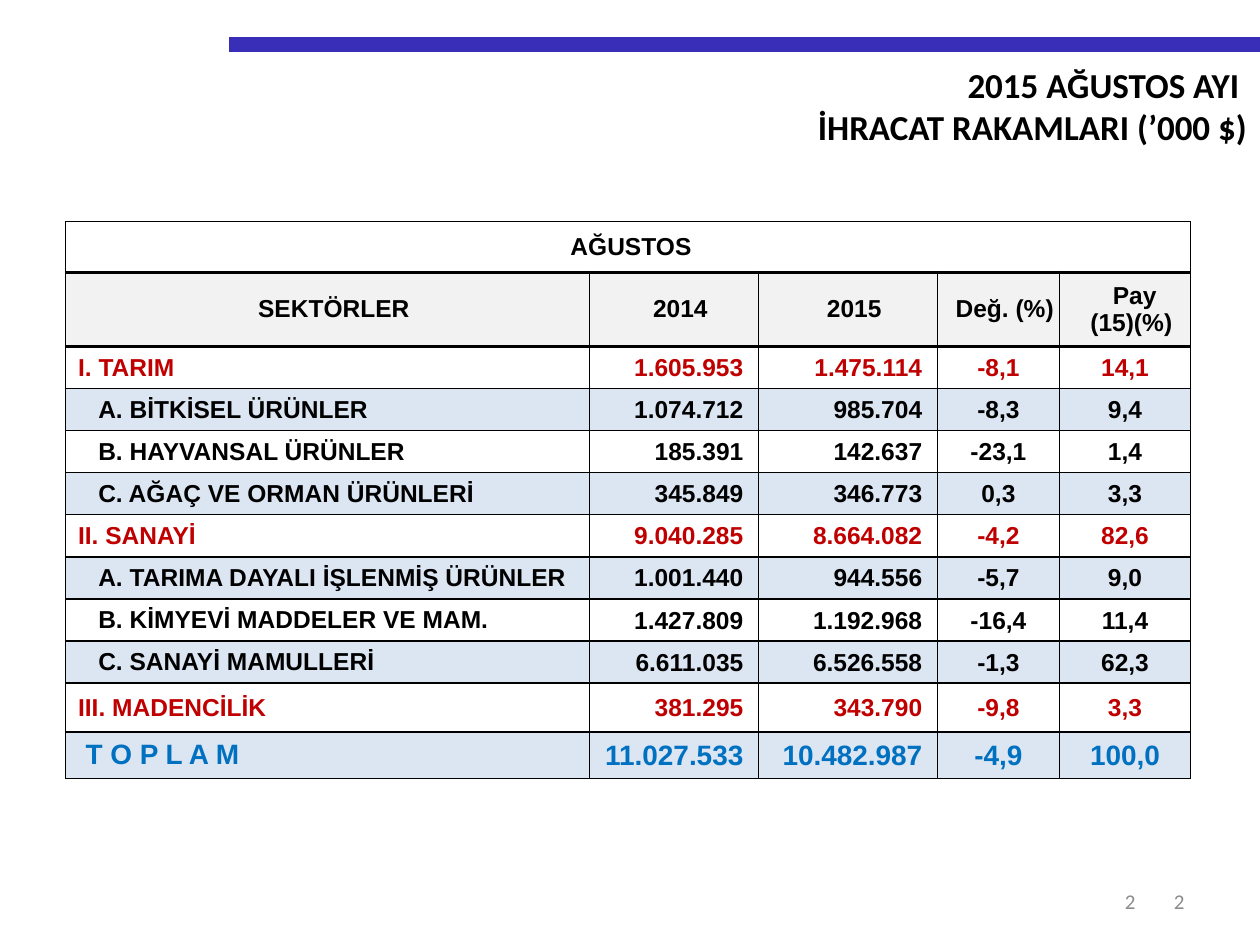
from lxml import etree
from pptx import Presentation
from pptx.dml.color import RGBColor
from pptx.enum.shapes import MSO_CONNECTOR
from pptx.enum.text import MSO_ANCHOR, MSO_AUTO_SIZE, PP_ALIGN
from pptx.oxml.ns import qn
from pptx.util import Inches, Pt

LEFT, CENTER, RIGHT = PP_ALIGN.LEFT, PP_ALIGN.CENTER, PP_ALIGN.RIGHT
TOP, MIDDLE = MSO_ANCHOR.TOP, MSO_ANCHOR.MIDDLE
STRAIGHT, NO_FIT = MSO_CONNECTOR.STRAIGHT, MSO_AUTO_SIZE.NONE

GRID_COLUMNS, GRID_ROWS = 100, 75
COLORS = {
    "text": "000000", "bar": "382EB8", "number": "8C8C8C", "white": "FFFFFF",
    "header": "F2F2F2", "band": "DCE6F2", "sector": "C00000", "total": "0070C0",
}
COLUMN_WIDTHS = [41.6, 13.4, 14.2, 9.7, 10.4]
ROW_HEIGHTS = [4, 5.9] + [3.3] * 8 + [3.9, 3.6]
HEADER = ["SEKTÖRLER", "2014", "2015", "Değ. (%)", " Pay\n(15)(%)"]
EXPORTS = [
    ["I. TARIM", "1.605.953", "1.475.114", "-8,1", "14,1"],
    ["A. BİTKİSEL ÜRÜNLER", "1.074.712", "985.704", "-8,3", "9,4"],
    ["B. HAYVANSAL ÜRÜNLER", "185.391", "142.637", "-23,1", "1,4"],
    ["C. AĞAÇ VE ORMAN ÜRÜNLERİ", "345.849", "346.773", "0,3", "3,3"],
    ["II. SANAYİ", "9.040.285", "8.664.082", "-4,2", "82,6"],
    ["A. TARIMA DAYALI İŞLENMİŞ ÜRÜNLER", "1.001.440", "944.556", "-5,7", "9,0"],
    ["B. KİMYEVİ MADDELER VE MAM.", "1.427.809", "1.192.968", "-16,4", "11,4"],
    ["C. SANAYİ MAMULLERİ", "6.611.035", "6.526.558", "-1,3", "62,3"],
    ["III. MADENCİLİK", "381.295", "343.790", "-9,8", "3,3"],
    ["T O P L A M", "11.027.533", "10.482.987", "-4,9", "100,0"],
]
ALIGNMENTS = [LEFT, RIGHT, RIGHT, CENTER, CENTER]
LABEL_INSETS = (0.1, 0.05, 0, 0.05)
NUMBER_INSETS = (0.01, 0.01, 0.12, 0)
RATIO_INSETS = (0.01, 0.01, 0.01, 0)
CELL_INSETS = [LABEL_INSETS] + [NUMBER_INSETS] * 2 + [RATIO_INSETS] * 2


class SlideBuilder:
    """Draws styled elements on a slide, with lengths in grid columns and rows."""

    def __init__(self, deck):
        self.deck = deck
        self.page = deck.slides.add_slide(deck.slide_layouts[5])

    def across(self, columns):
        return round(self.deck.slide_width * columns / GRID_COLUMNS)

    def down(self, rows):
        return round(self.deck.slide_height * rows / GRID_ROWS)

    def place(self, left, top, width, height):
        return self.across(left), self.down(top), self.across(width), self.down(height)

    def set_text(self, frame, text, size, font, color, align, bold=False, indent=0):
        frame.text = text
        for para in frame.paragraphs:
            para.alignment = align
            if indent:
                properties = para._p.get_or_add_pPr()
                properties.set("marL", str(Inches(indent)))
                properties.set("indent", "0")
            for span in para.runs:
                span.font.size, span.font.name, span.font.bold = Pt(size), font, bold
                span.font.color.rgb = RGBColor.from_string(COLORS[color])

    def title(self, text, *area):
        box = self.page.shapes.title
        box.left, box.top, box.width, box.height = self.place(*area)
        frame = box.text_frame
        frame.auto_size, frame.vertical_anchor = NO_FIT, TOP
        self.set_text(frame, text, 20, "Calibri", "text", RIGHT, bold=True)

    def bar(self, left, right, top, weight):
        y = self.down(top)
        line = self.page.shapes.add_connector(
            STRAIGHT, self.across(left), y, self.across(right), y)
        line.line.width = Pt(weight)
        line.line.color.rgb = RGBColor.from_string(COLORS["bar"])
        etree.SubElement(line._element.spPr, qn("a:effectLst"))

    def page_number(self, text, *area):
        frame = self.page.shapes.add_textbox(*self.place(*area)).text_frame
        frame.word_wrap, frame.vertical_anchor = True, MIDDLE
        self.set_text(frame, text, 12, "Calibri", "number", RIGHT)

    def table(self, left, top, widths, heights):
        area = self.place(left, top, sum(widths), sum(heights))
        table = self.page.shapes.add_table(len(heights), len(widths), *area).table
        table.first_row = table.horz_banding = False
        for column, width in zip(table.columns, widths):
            column.width = self.across(width)
        for row, height in zip(table.rows, heights):
            row.height = self.down(height)
        return table

    def cell(self, cell, text, fill, insets, above=1, below=1, color="text",
             size=14, align=CENTER, indent=0):
        cell.fill.solid()
        cell.fill.fore_color.rgb = RGBColor.from_string(COLORS[fill])
        cell.vertical_anchor = MIDDLE
        (cell.margin_left, cell.margin_top,
         cell.margin_right, cell.margin_bottom) = map(Inches, insets)
        self.set_text(cell.text_frame, text, size, "Arial", color, align, True, indent)
        properties = cell._tc.get_or_add_tcPr()
        edges = [("a:lnL", 1), ("a:lnR", 1), ("a:lnT", above), ("a:lnB", below)]
        for position, (edge, weight) in enumerate(edges):
            border = etree.Element(qn(edge), w=str(Pt(weight)))
            paint = etree.SubElement(border, qn("a:solidFill"))
            etree.SubElement(paint, qn("a:srgbClr"), val=COLORS["text"])
            properties.insert(position, border)


def row_style(label):
    if label.startswith("I"):
        return {"color": "sector"}, 0
    if label.startswith("T"):
        return {"color": "total", "size": 16}, 0.06
    return {}, 0.16


def fill_table(builder, table):
    table.cell(0, 0).merge(table.cell(0, len(HEADER) - 1))
    for column, heading in enumerate(HEADER):
        month = " AĞUSTOS" if column == 0 else ""
        builder.cell(table.cell(0, column), month, "white", (0.1, 0.05, 0.1, 0.05), below=2)
        builder.cell(table.cell(1, column), heading, "header", LABEL_INSETS, 2, 2)
    for index, values in enumerate(EXPORTS):
        style, indent = row_style(values[0])
        for column, value in enumerate(values):
            builder.cell(
                table.cell(index + 2, column), value, "band" if index % 2 else "white",
                CELL_INSETS[column], above=1 if index else 2, align=ALIGNMENTS[column],
                indent=0 if column else indent, **style)


def main():
    deck = Presentation()
    deck.slide_width, deck.slide_height = Inches(10), Inches(7.5)
    builder = SlideBuilder(deck)
    builder.bar(18.2, 100, 3.5, 8.5)
    for left, width in [(71.7, 23.3), (70.1, 21)]:
        builder.page_number("2", left, 69.5, width, 4)
    builder.title("2015 AĞUSTOS AYI \nİHRACAT RAKAMLARI (’000 $)", 10.6, 4.5, 89.4, 7.7)
    fill_table(builder, builder.table(5.2, 17.6, COLUMN_WIDTHS, ROW_HEIGHTS))
    deck.save("out.pptx")


if __name__ == "__main__":
    main()
